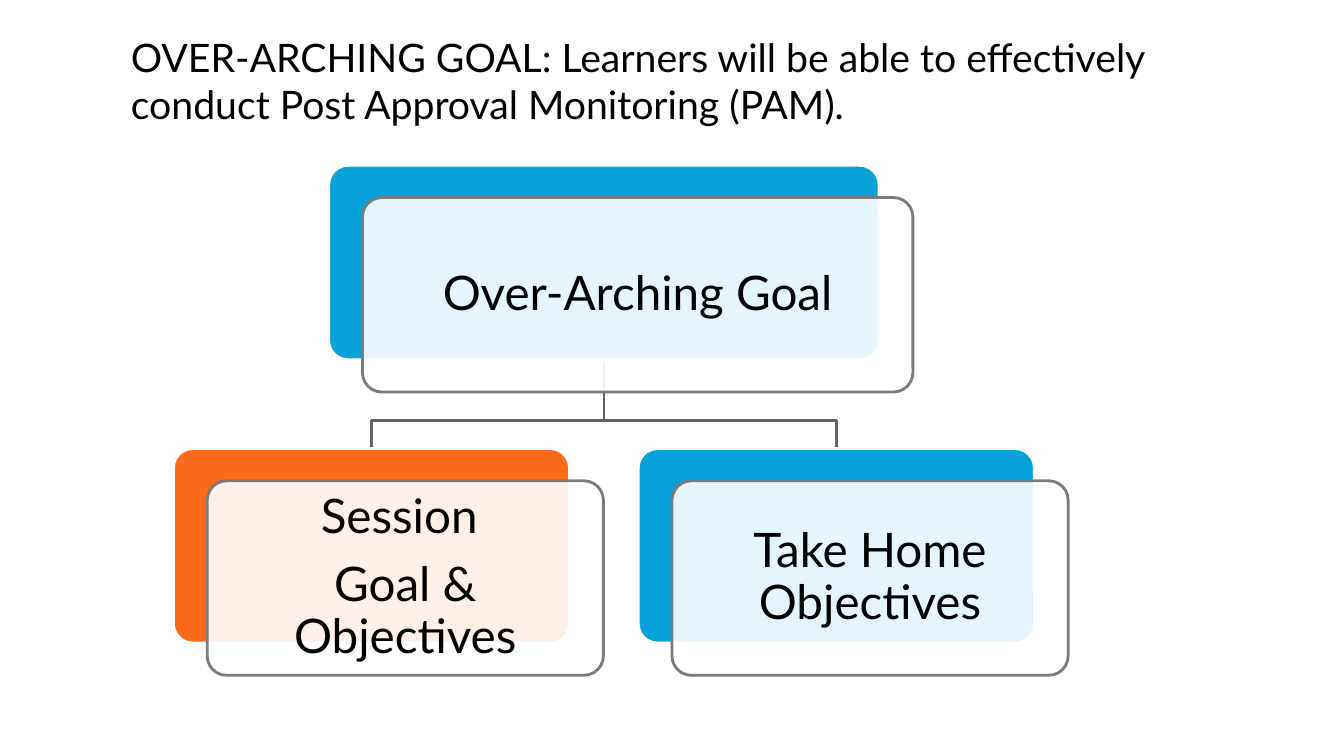
from lxml import etree
from pptx import Presentation
from pptx import util as u
from pptx.dml.color import RGBColor
from pptx.enum import shapes, text
from pptx.oxml.ns import qn

TITLE = ("OVER-ARCHING GOAL: Learners will be able to effectively "
         "conduct Post Approval Monitoring (PAM).")
ROOT = {"lines": ["Over-Arching Goal"], "at": (3.26, 1.64), "width": 5.46, "fill": "blue"}
CHILDREN = [
    {"lines": ["Session ", "Goal & Objectives"], "at": (1.72, 4.45), "width": 3.93, "fill": "orange"},
    {"lines": ["Take Home Objectives"], "at": (6.33, 4.45), "width": 3.93, "fill": "blue"},
]
THEME = {
    "font": "Lato", "title": 28, "card": 34, "line": 2,
    "blue": "08A1D9", "orange": "F96A1B", "white": "FFFFFF",
    "black": "000000", "border": "797B7E", "branch": "616365",
}
CARD_H = 1.93
SHIFT_X, SHIFT_Y = 0.335, 0.32
ELBOW_DROP = 0.6


def color(name):
    return RGBColor.from_string(THEME[name])


def write(tf, lines, size):
    tf.word_wrap = True
    tf.vertical_anchor = text.MSO_ANCHOR.MIDDLE
    for i, line in enumerate(lines):
        p = tf.paragraphs[0] if i == 0 else tf.add_paragraph()
        p.text = line
        p.font.name = THEME["font"]
        p.font.size = u.Pt(THEME[size])
        p.font.color.rgb = color("black")


def outline(sp, name):
    sp.shadow.inherit = False
    sp.line.color.rgb = color(name)
    sp.line.width = u.Pt(THEME["line"])


def add_box(s, x, y, w, fill, border):
    sp = s.shapes.add_shape(shapes.MSO_SHAPE.ROUNDED_RECTANGLE,
                            u.Inches(x), u.Inches(y), u.Inches(w), u.Inches(CARD_H))
    sp.adjustments[0] = 0.1
    sp.fill.solid()
    sp.fill.fore_color.rgb = color(fill)
    outline(sp, border)
    return sp


def add_node(s, node):
    x, y = node["at"]
    add_box(s, x, y, node["width"], node["fill"], "white")
    sp = add_box(s, x + SHIFT_X, y + SHIFT_Y, node["width"], "white", "border")
    clr = sp.fill._xPr.find(qn("a:solidFill"))[0]
    etree.SubElement(clr, qn("a:alpha"), val="90000")
    tf = sp.text_frame
    tf.margin_left = tf.margin_right = tf.margin_top = tf.margin_bottom = u.Inches(0.14)
    write(tf, node["lines"], "card")
    for p in tf.paragraphs:
        p.alignment = text.PP_ALIGN.CENTER
        p.line_spacing = 0.9
        p.space_after = u.Pt(12)


def add_branch(s, parent, child):
    x1, x2 = (n["at"][0] + n["width"] / 2 for n in (parent, child))
    y1, y2 = parent["at"][1] + CARD_H, child["at"][1]
    elbow = y1 + ELBOW_DROP
    points = [(u.Inches(x), u.Inches(y))
              for x, y in ((x1, y1), (x1, elbow), (x2, elbow), (x2, y2))]
    fb = s.shapes.build_freeform(*points[0])
    fb.add_line_segments(points[1:], close=False)
    sp = fb.convert_to_shape()
    sp.fill.background()
    outline(sp, "branch")


def main():
    prs = Presentation()
    prs.slide_width, prs.slide_height = u.Inches(13.33), u.Inches(7.5)
    s = prs.slides.add_slide(prs.slide_layouts[6])
    for child in reversed(CHILDREN):
        add_branch(s, ROOT, child)
    for node in [ROOT, *CHILDREN]:
        add_node(s, node)
    title = s.shapes.add_textbox(u.Inches(1.2), u.Inches(0.4), u.Inches(10.97), u.Inches(0.8))
    write(title.text_frame, [TITLE], "title")
    prs.save("out.pptx")


if __name__ == "__main__":
    main()
